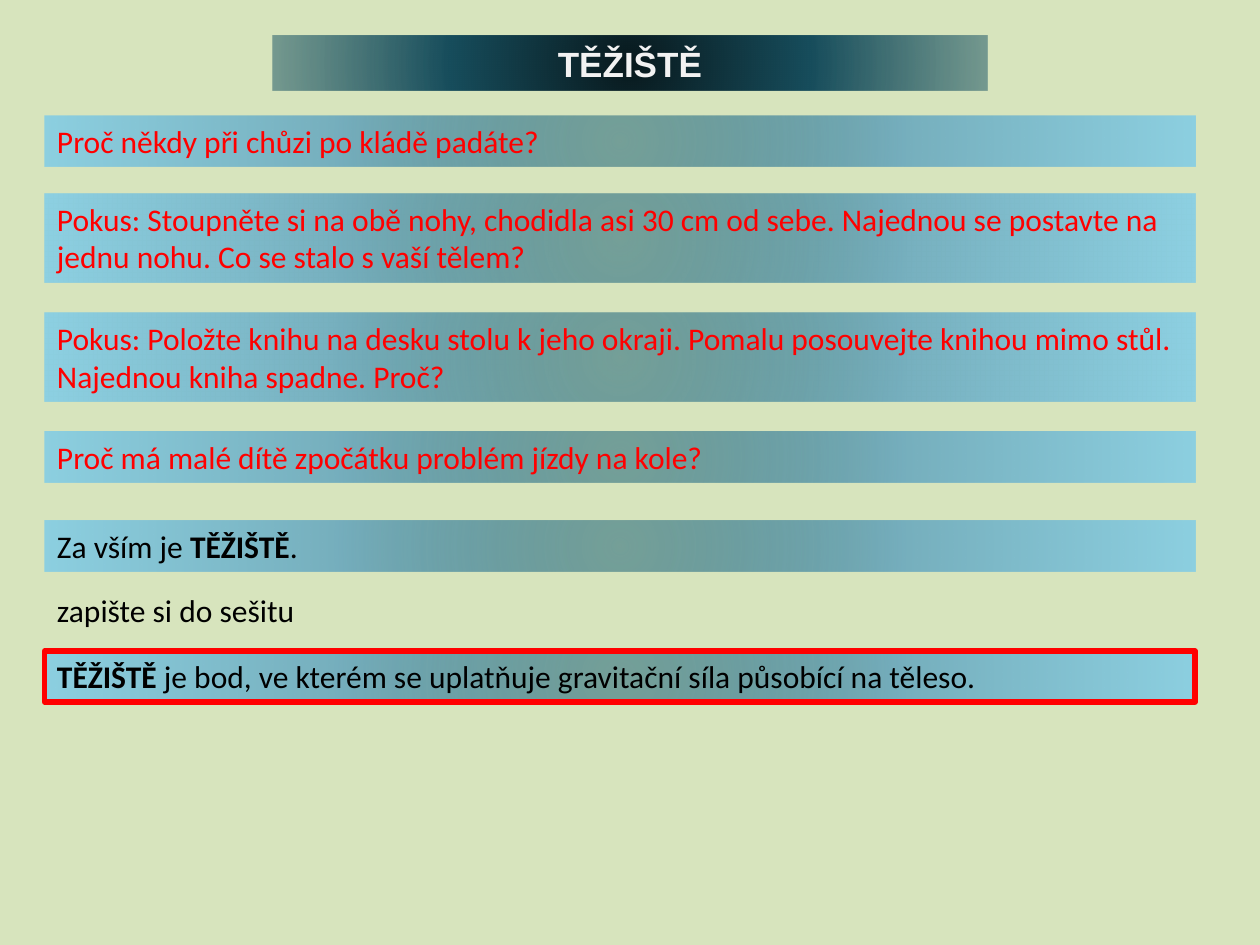
"""Build the slide that introduces the centre of gravity."""
from dataclasses import dataclass
from typing import Optional

from lxml.etree import SubElement
from pptx import Presentation
from pptx.dml.color import RGBColor
from pptx.enum.text import MSO_ANCHOR, MSO_AUTO_SIZE, PP_ALIGN
from pptx.oxml.ns import qn
from pptx.util import Pt

RED = "FF0000"
BLACK = "000000"
LEFT, WIDTH = 25.5, 657.4
ONE_LINE, TWO_LINES = 29.1, 50.9


@dataclass(frozen=True)
class Stop:
    position: int
    color: str
    opacity: int = 100


@dataclass(frozen=True)
class Phrase:
    text: str
    bold: bool = False


@dataclass(frozen=True)
class Panel:
    top: float
    phrases: tuple[Phrase, ...]
    color: str = BLACK
    height: float = ONE_LINE
    filled: bool = True
    border: Optional[str] = None


TITLE_STOPS = (Stop(0, "09191D"), Stop(50, "174D5C"), Stop(100, "215968", 53))
PANEL_STOPS = (Stop(0, "27697B", 55), Stop(50, "77B0BF"), Stop(100, "8DD0E2"))

PANELS = (
    Panel(66, (Phrase("Proč někdy při chůzi po kládě padáte?"),), RED),
    Panel(110.5, (Phrase("Pokus: Stoupněte si na obě nohy, chodidla asi 30 cm od sebe. "
                         "Najednou se postavte na jednu nohu. Co se stalo s vaší tělem?"),),
          RED, TWO_LINES),
    Panel(178.6, (Phrase("Pokus: Položte knihu na desku stolu k jeho okraji. Pomalu "
                         "posouvejte knihou mimo stůl. Najednou kniha spadne. Proč?"),),
          RED, TWO_LINES),
    Panel(246.5, (Phrase("Proč má malé dítě zpočátku problém jízdy na kole?"),), RED),
    Panel(297.4, (Phrase("Za vším je "), Phrase("TĚŽIŠTĚ", True), Phrase("."))),
    Panel(372, (Phrase("TĚŽIŠTĚ ", True),
                Phrase("je bod, ve kterém se uplatňuje gravitační síla působící na těleso.")),
          border=RED),
    Panel(334.1, (Phrase("zapište si do sešitu"),), filled=False),
)


def rgb(color: str) -> RGBColor:
    return RGBColor.from_string(color)


def fill_radial(shape, stops: tuple[Stop, ...]) -> None:
    shape.fill.gradient()
    gradient = shape.element.spPr.find(qn("a:gradFill"))
    gradient.clear()
    stop_list = SubElement(gradient, qn("a:gsLst"))
    for stop in stops:
        mark = SubElement(stop_list, qn("a:gs"), pos=str(stop.position * 1000))
        tint = SubElement(mark, qn("a:srgbClr"), val=stop.color)
        if stop.opacity < 100:
            SubElement(tint, qn("a:alpha"), val=str(stop.opacity * 1000))
    circle = SubElement(gradient, qn("a:path"), path="circle")
    SubElement(circle, qn("a:fillToRect"), l="50000", t="50000", r="50000", b="50000")


def format_run(run, font_name: str, size: float, color: str, bold: bool) -> None:
    run.font.name = font_name
    run.font.size = Pt(size)
    run.font.color.rgb = rgb(color)
    run.font.bold = bold


def draw_title(slide, text: str) -> None:
    title = slide.shapes.title
    title.left, title.top, title.width, title.height = Pt(155.6), Pt(20.2), Pt(408.8), Pt(31.6)
    fill_radial(title, TITLE_STOPS)
    frame = title.text_frame
    frame.text = text
    frame.auto_size = MSO_AUTO_SIZE.NONE
    frame.vertical_anchor = MSO_ANCHOR.MIDDLE
    frame.paragraphs[0].alignment = PP_ALIGN.CENTER
    format_run(frame.paragraphs[0].runs[0], "Arial", 20, "F2F2F2", True)


def draw_panel(slide, panel: Panel) -> None:
    box = slide.shapes.add_textbox(Pt(LEFT), Pt(panel.top), Pt(WIDTH), Pt(panel.height))
    if panel.filled:
        fill_radial(box, PANEL_STOPS)
    if panel.border:
        box.line.color.rgb = rgb(panel.border)
        box.line.width = Pt(3)
    frame = box.text_frame
    frame.word_wrap = True
    frame.auto_size = MSO_AUTO_SIZE.SHAPE_TO_FIT_TEXT
    for phrase in panel.phrases:
        run = frame.paragraphs[0].add_run()
        run.text = phrase.text
        format_run(run, "Calibri", 18, panel.color, phrase.bold)


def main() -> None:
    deck = Presentation()
    deck.slide_width, deck.slide_height = Pt(720), Pt(540)
    slide = deck.slides.add_slide(deck.slide_layouts.get_by_name("Title Only"))
    slide.background.fill.solid()
    slide.background.fill.fore_color.rgb = rgb("D7E4BD")
    draw_title(slide, "TĚŽIŠTĚ")
    for panel in PANELS:
        draw_panel(slide, panel)
    deck.save("out.pptx")


if __name__ == "__main__":
    main()
